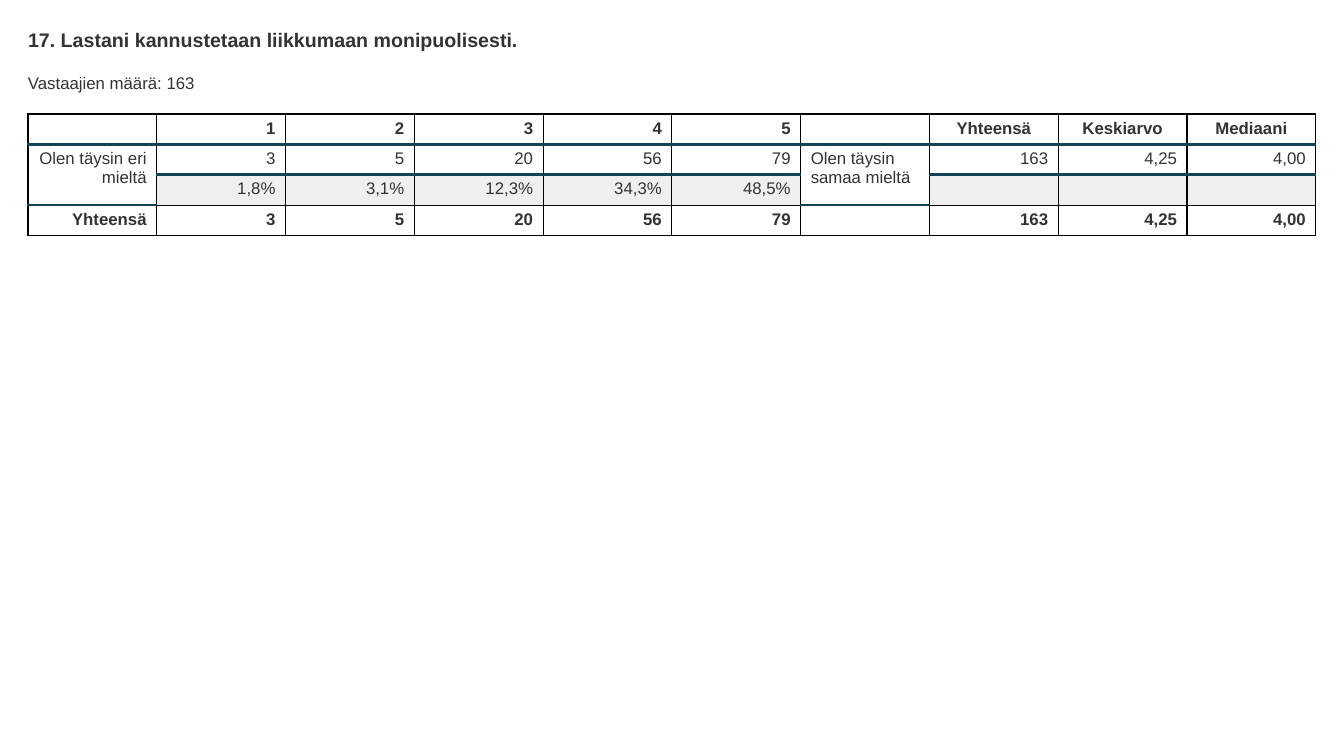
from lxml import etree
from pptx import Presentation
from pptx.dml.color import RGBColor
from pptx.enum.text import MSO_ANCHOR, MSO_AUTO_SIZE, PP_ALIGN
from pptx.oxml.ns import qn
from pptx.util import Emu, Pt

LEFT, CENTER, RIGHT = PP_ALIGN.LEFT, PP_ALIGN.CENTER, PP_ALIGN.RIGHT
TOP, NO_FIT = MSO_ANCHOR.TOP, MSO_AUTO_SIZE.NONE
TITLE_ONLY = 5
PX = 914400 / 100.8
FONT = "Arial"
COLORS = {"text": "333333", "rule": "124456", "grid": "000000",
          "shade": "EFEFEF", "plain": "FFFFFF"}
MARGIN, WIDTH, ROW_H = 28, 1288, 30
LABEL_COLS = (0, 6)
ROWS = [
    ["", "1", "2", "3", "4", "5", "", "Yhteensä", "Keskiarvo", "Mediaani"],
    ["Olen täysin eri mieltä", "3", "5", "20", "56", "79",
     "Olen täysin samaa mieltä", "163", "4,25", "4,00"],
    ["", "1,8%", "3,1%", "12,3%", "34,3%", "48,5%", "", "", "", ""],
    ["Yhteensä", "3", "5", "20", "56", "79", "", "163", "4,25", "4,00"],
]


def px(n):
    """Convert pixels to EMU."""
    return Emu(round(n * PX))


def rgb(name):
    """Return a named colour."""
    return RGBColor.from_string(COLORS[name])


def write(tf, text, size, bold=False, align=LEFT):
    """Write one formatted paragraph into a text frame."""
    p = tf.paragraphs[0]
    p.alignment = align
    if not text:
        p._p.get_or_add_endParaRPr().set("sz", str(size * 100))
        return
    r = p.add_run()
    r.text = text
    for key, value in {"name": FONT, "size": Pt(size), "bold": bold}.items():
        setattr(r.font, key, value)
    r.font.color.rgb = rgb("text")


def add_heading(sp, top, height, text, size, bold=False):
    """Place a heading shape and write its text without insets."""
    sp.left, sp.top, sp.width, sp.height = map(px, (MARGIN, top, WIDTH, height))
    tf = sp.text_frame
    frame = {"margin_left": 0, "margin_right": 0, "margin_top": 0, "margin_bottom": 0,
             "word_wrap": True, "auto_size": NO_FIT, "vertical_anchor": TOP}
    for key, value in frame.items():
        setattr(tf, key, value)
    write(tf, text, size, bold)


def is_rule(row, col):
    """Tell whether the line under a cell is a coloured rule."""
    return row == 0 or row == (2 if col in LABEL_COLS else 1)


def set_borders(cell, row, col):
    """Draw the four borders of a cell."""
    rules = {"L": False, "R": False, "T": is_rule(row - 1, col), "B": is_rule(row, col)}
    if row == 1 and col in LABEL_COLS:
        rules["B"] = True
    for side, rule in rules.items():
        ln = etree.SubElement(cell._tc.get_or_add_tcPr(), qn(f"a:ln{side}"),
                              w=str(Pt(2 if rule else 1)))
        fill = etree.SubElement(ln, qn("a:solidFill"))
        etree.SubElement(fill, qn("a:srgbClr"), val=COLORS["rule" if rule else "grid"])


def cell_align(row, col):
    """Return the alignment for a table position."""
    if row == 0 and col > 6:
        return CENTER
    return LEFT if col == 6 else RIGHT


def add_results(s):
    """Add the table of answers."""
    n_rows, n_cols = len(ROWS), len(ROWS[0])
    table = s.shapes.add_table(n_rows, n_cols, px(MARGIN), px(114),
                               px(WIDTH), px(n_rows * ROW_H)).table
    table.first_row = table.horz_banding = False
    for row, texts in enumerate(ROWS):
        for col, text in enumerate(texts):
            cell = table.cell(row, col)
            set_borders(cell, row, col)
            shaded = row == 2 and col not in LABEL_COLS
            cell.fill.solid()
            cell.fill.fore_color.rgb = rgb("shade" if shaded else "plain")
            write(cell.text_frame, text, 12, row in (0, 3), cell_align(row, col))
    for col in LABEL_COLS:
        table.cell(1, col).merge(table.cell(2, col))


def main():
    """Build the slide and save it."""
    prs = Presentation()
    prs.slide_width, prs.slide_height = px(1344), px(756)
    s = prs.slides.add_slide(prs.slide_layouts[TITLE_ONLY])
    add_heading(s.shapes.title, 28, 23,
                "17. Lastani kannustetaan liikkumaan monipuolisesti.", 14, True)
    add_heading(s.shapes.add_textbox(0, 0, 0, 0), 73, 20, "Vastaajien määrä: 163", 12)
    add_results(s)
    prs.save("out.pptx")


if __name__ == "__main__":
    main()
